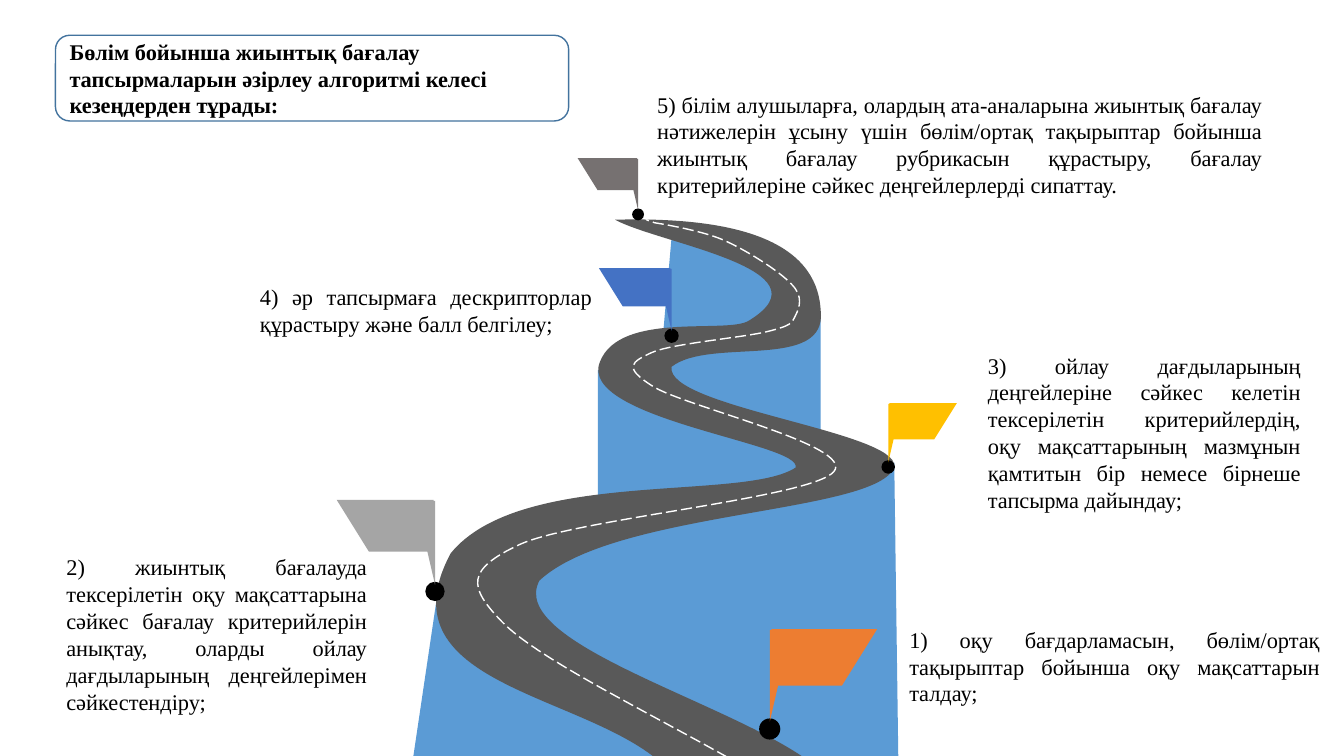
"""Build a slide with a winding road whose five flags mark the steps of an algorithm."""
from lxml import etree
from pptx import Presentation
from pptx import util as u
from pptx.dml.color import RGBColor
from pptx.enum import dml, shapes, text
from pptx.oxml.ns import qn

prs = Presentation()
prs.slide_width, prs.slide_height = u.Inches(13.33), u.Inches(7.5)
ROWS = 750
cell = prs.slide_height // ROWS
s = prs.slides.add_slide(prs.slide_layouts[6])


def paint(sp, fill=None, line=None):
    sp.shadow.inherit = False
    for part, colour in ((sp.fill, fill), (sp.line.fill, line)):
        if colour:
            part.solid()
            part.fore_color.rgb = RGBColor.from_string(colour)
        else:
            part.background()
    return sp


def outline(parent, points):
    pts = [(x * cell, y * cell) for x, y in points]
    builder = parent.build_freeform(*pts[0])
    builder.add_line_segments(pts[1:], close=True)
    return builder.convert_to_shape()


cliffs = [
    [(433, 595), (410, 750), (671, 752)],
    [(666, 237), (658, 328), (772, 325), (774, 267), (727, 244)],
    [(814, 315), (814, 431), (630, 376), (658, 345)],
    [(593, 367), (593, 496), (824, 474), (785, 435)],
    [(887, 459), (891, 752), (694, 751), (475, 590), (645, 500)],
]
for points in cliffs:
    paint(outline(s.shapes, points), "5B9BD5")

road = [
    (650, 752), (568, 687), (379, 676), (447, 549),
    (516, 464), (737, 498), (789, 464),
    (798, 440), (572, 416), (595, 359),
    (615, 308), (722, 332), (743, 318),
    (826, 267), (654, 242), (610, 218),
    (726, 215), (810, 237), (814, 308),
    (821, 369), (704, 334), (666, 364),
    (660, 404), (891, 428), (887, 463),
    (872, 510), (610, 506), (535, 576),
    (503, 636), (708, 692), (795, 750),
]
lane = [
    (721, 751), (630, 700), (532, 652), (498, 617),
    (464, 582), (462, 565), (516, 540),
    (571, 515), (805, 494), (827, 468),
    (849, 442), (677, 403), (647, 383),
    (617, 364), (627, 359), (646, 350),
    (665, 341), (737, 335), (761, 329),
    (785, 323), (785, 321), (789, 313),
    (793, 305), (797, 294), (785, 282),
    (773, 269), (740, 248), (717, 238),
    (694, 228), (649, 221), (649, 221),
    (647, 220), (643, 219), (641, 218),
]
curves = [
    (road, (432, 218), (887, 752), "595959", None),
    (lane, (474, 218), (829, 751), None, "FFFFFF"),
]
for knots, (left, top), corner, fill, line in curves:
    sp = paint(outline(s.shapes, [(left, top), corner]), fill, line)
    track = next(sp._element.iter(qn("a:path")))
    for old in list(track):
        track.remove(old)
    for i, (x, y) in enumerate(knots):
        if i == 0 or i % 3 == 1:
            move = etree.SubElement(track, qn("a:cubicBezTo" if i else "a:moveTo"))
        etree.SubElement(move, qn("a:pt"), x=str((x - left) * cell), y=str((y - top) * cell))
    if fill:
        etree.SubElement(track, qn("a:close"))
    else:
        sp.line.width = u.Pt(1)
        sp.line.dash_style = dml.MSO_LINE.LONG_DASH

flags = [
    (632, 157, 59, -1, "767171"),
    (882, 400, 67, 1, "FFC000"),
    (665, 266, 71, -1, "4472C4"),
    (430, 496, 96, -1, "A5A5A5"),
    (765, 624, 105, 1, "ED7D31"),
]
for pole, top, size, side, colour in flags:
    grp = s.shapes.add_group_shape().shapes
    foot = pole - side * 0.015 * size
    dot = 0.2 * size
    box = [round(v * cell) for v in (foot - dot / 2, top + 0.845 * size, dot, dot)]
    paint(grp.add_shape(shapes.MSO_SHAPE.OVAL, *box), "000000")
    left = foot if side > 0 else foot - dot
    box = [round(v * cell) for v in (left, top + 0.01 * size, dot, 0.865 * size)]
    sp = paint(grp.add_shape(shapes.MSO_SHAPE.RIGHT_TRIANGLE, *box), colour)
    sp.rotation = 180
    if side > 0:
        sp._element.spPr.xfrm.set("flipH", "1")
    tip, low = pole + side * size, top + 0.535 * size
    cloth = [(tip, top), (pole, top), (pole, low), (tip - side * size / 3, low)]
    paint(outline(grp, cloth), colour)

title = s.shapes.add_shape(shapes.MSO_SHAPE.ROUNDED_RECTANGLE,
                           *[v * cell for v in (55, 35, 509, 85)])
paint(title, "FFFFFF", "43739E").line.width = u.Pt(1)

blocks = [(title, "Бөлім бойынша жиынтық бағалау тапсырмаларын әзірлеу алгоритмі "
                  "келесі кезеңдерден тұрады:")]
steps = [
    (892, 616, 427, 91, "1) оқу бағдарламасын, бөлім/ортақ тақырыптар бойынша оқу "
                        "мақсаттарын талдау;"),
    (56, 544, 318, 172, "2) жиынтық бағалауда тексерілетін оқу мақсаттарына сәйкес "
                        "бағалау критерийлерін анықтау, оларды ойлау дағдыларының "
                        "деңгейлерімен сәйкестендіру;"),
    (970, 344, 330, 172, "3) ойлау дағдыларының деңгейлеріне сәйкес келетін "
                         "тексерілетін критерийлердің, оқу мақсаттарының мазмұнын "
                         "қамтитын бір немесе бірнеше тапсырма дайындау;"),
    (248, 276, 349, 64, "4) әр тапсырмаға дескрипторлар құрастыру және балл белгілеу;"),
    (642, 85, 620, 118, "5) білім алушыларға, олардың ата-аналарына жиынтық бағалау "
                        "нәтижелерін ұсыну үшін бөлім/ортақ тақырыптар бойынша "
                        "жиынтық бағалау рубрикасын құрастыру, бағалау "
                        "критерийлеріне сәйкес деңгейлерлерді сипаттау."),
]
for *box, words in steps:
    blocks.append((s.shapes.add_textbox(*[v * cell for v in box]), words))

for sp, words in blocks:
    heading = sp is title
    tf = sp.text_frame
    tf.word_wrap = True
    tf.vertical_anchor = text.MSO_ANCHOR.MIDDLE if heading else text.MSO_ANCHOR.TOP
    p = tf.paragraphs[0]
    p.alignment = text.PP_ALIGN.LEFT if heading else text.PP_ALIGN.JUSTIFY
    r = p.add_run()
    r.text = words
    r.font.name, r.font.size, r.font.bold = "Times New Roman", u.Pt(16), heading
    r.font.color.rgb = RGBColor.from_string("000000")

prs.save("out.pptx")
